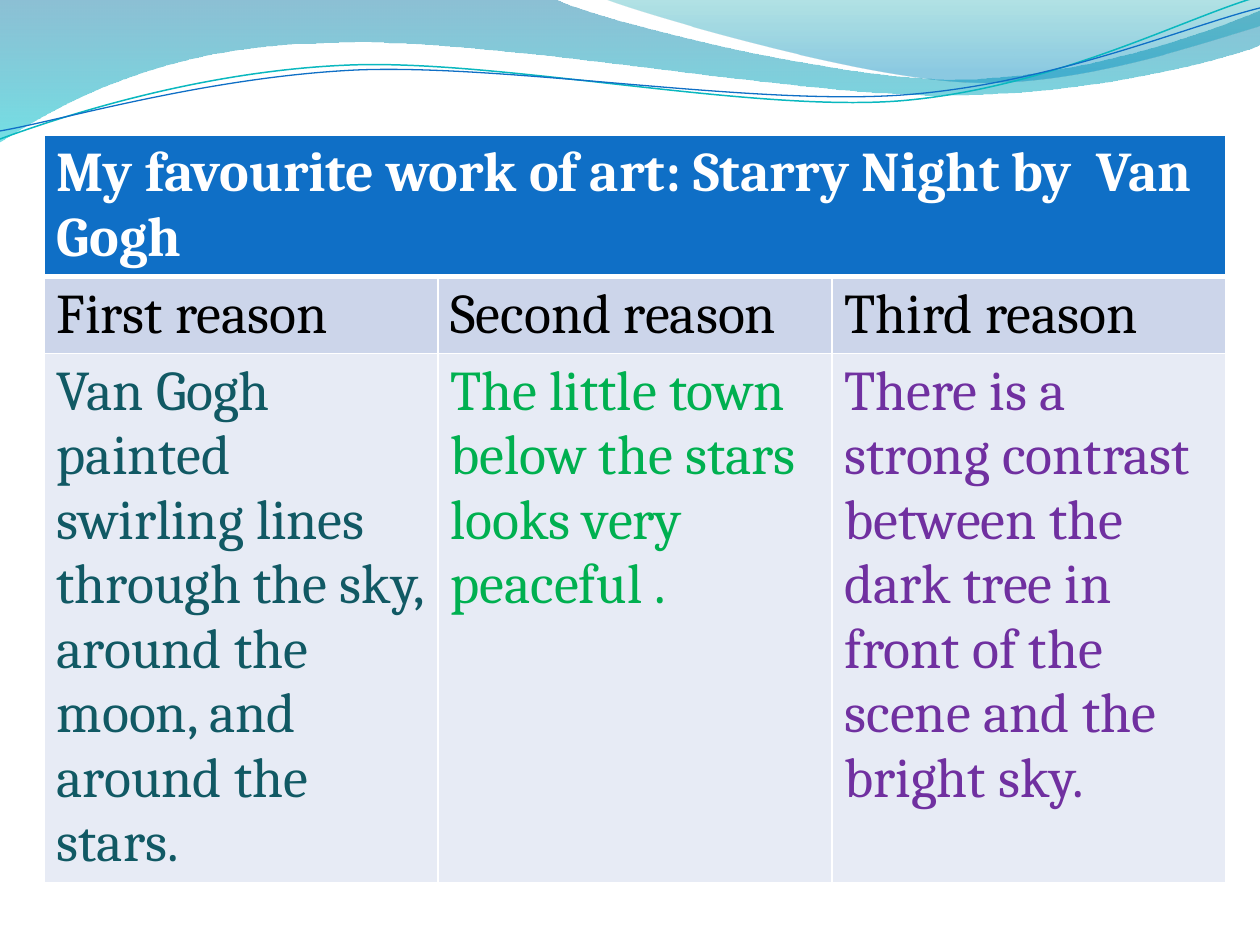
from dataclasses import dataclass

import lxml.etree
import pptx
import pptx.dml.color
import pptx.oxml
import pptx.oxml.ns
import pptx.util

RGBColor = pptx.dml.color.RGBColor
Point = tuple[int, int]
Segment = tuple[Point, ...]

PX = 914400 / 126
FONT_NAME = "Cambria"
FONT_SIZE = pptx.util.Pt(32)

WHITE = RGBColor(0xFF, 0xFF, 0xFF)
BLACK = RGBColor(0x00, 0x00, 0x00)
BLUE = RGBColor(0x0F, 0x6F, 0xC6)
AQUA = RGBColor(0x0A, 0xB8, 0xBF)
DEEP_BLUE = RGBColor(0x00, 0x74, 0xA1)
CYAN = RGBColor(0x00, 0xC6, 0xCF)
SEA_GREEN = RGBColor(0x00, 0xA1, 0xA9)
SKY_BLUE = RGBColor(0x00, 0x8B, 0xBF)
BAND_DARK = RGBColor(0xCC, 0xD5, 0xEA)
BAND_LIGHT = RGBColor(0xE7, 0xEB, 0xF5)
TEAL = RGBColor(0x11, 0x59, 0x64)
GREEN = RGBColor(0x00, 0xB0, 0x50)
PURPLE = RGBColor(0x70, 0x30, 0xA0)


@dataclass
class GradientStop:
    position: float
    color: RGBColor
    opacity: int


@dataclass
class Wave:
    start: Point
    segments: list[Segment]
    stops: tuple[GradientStop, GradientStop]


@dataclass
class Strand:
    start: Point
    segments: list[Segment]
    color: RGBColor
    width: float


@dataclass
class Reason:
    heading: str
    paragraphs: list[str]
    color: RGBColor


WAVES = [
    Wave(
        (0, 0),
        [
            ((554, -1),),
            ((600, 21), (837, 79), (955, 79)),
            ((1075, 79), (1207, 33), (1260, 11)),
            ((1261, 45),),
            ((1239, 55), (1096, 96), (940, 95)),
            ((784, 95), (481, 35), (324, 43)),
            ((163, 45), (58, 105), (-1, 142)),
        ],
        (GradientStop(0, DEEP_BLUE, 45), GradientStop(1, CYAN, 55)),
    ),
    Wave(
        (604, -1),
        [
            ((641, 14), (859, 78), (969, 82)),
            ((1079, 87), (1211, 40), (1260, 26)),
            ((1260, 0),),
        ],
        (GradientStop(0, SEA_GREEN, 30), GradientStop(0.8, SKY_BLUE, 45)),
    ),
]

STRANDS = [
    Strand(
        (0, 139),
        [
            ((60, 117), (199, 71), (349, 65)),
            ((498, 59), (747, 112), (898, 101)),
            ((1050, 89), (1182, 19), (1257, -3)),
        ],
        AQUA,
        0.85,
    ),
    Strand(
        (0, 131),
        [
            ((59, 121), (207, 77), (357, 70)),
            ((508, 64), (752, 106), (903, 95)),
            ((1053, 84), (1187, 26), (1260, 8)),
        ],
        BLUE,
        0.75,
    ),
]

TITLE = "My favourite work of art: Starry Night by  Van Gogh"
REASONS = [
    Reason(
        "First reason",
        ["Van Gogh painted",
         "swirling lines through the sky, around the moon, and around the stars."],
        TEAL,
    ),
    Reason("Second reason", ["The little town below the stars looks very peaceful ."], GREEN),
    Reason(
        "Third reason",
        ["There is a strong contrast between the dark tree in front of the scene "
         "and the bright sky."],
        PURPLE,
    ),
]
TABLE_LEFT, TABLE_TOP, TABLE_HEIGHT = 44, 135, 777
COLUMN_WIDTH, ROW_HEIGHT, ROW_COUNT = 394, 52, 3


def emu(pixels: int) -> int:
    return round(pixels * PX)


def add_outline(slide, start: Point, segments: list[Segment], close: bool):
    points = [point for segment in segments for point in segment]
    builder = slide.shapes.build_freeform(emu(start[0]), emu(start[1]))
    builder.add_line_segments([(emu(x), emu(y)) for x, y in points], close=close)
    shape = builder.convert_to_shape()
    shape.shadow.inherit = False
    lines = iter(list(shape.element.iter(pptx.oxml.ns.qn("a:lnTo"))))
    for segment in segments:
        steps = [next(lines) for _ in segment]
        if len(steps) == 3:
            curve = lxml.etree.Element(pptx.oxml.ns.qn("a:cubicBezTo"))
            steps[0].addprevious(curve)
            for step in steps:
                curve.append(step[0])
                step.getparent().remove(step)
    return shape


def add_wave(slide, wave: Wave) -> None:
    shape = add_outline(slide, wave.start, wave.segments, True)
    shape.line.fill.background()
    shape.fill.gradient()
    shape.fill.gradient_angle = 270
    for stop, values in zip(shape.fill.gradient_stops, wave.stops):
        stop.position = values.position
        stop.color.rgb = values.color
    colors = shape.element.spPr.iterfind(".//" + pptx.oxml.ns.qn("a:srgbClr"))
    for color, values in zip(colors, wave.stops):
        alpha = lxml.etree.SubElement(color, pptx.oxml.ns.qn("a:alpha"))
        alpha.set("val", str(values.opacity * 1000))


def add_strand(slide, strand: Strand) -> None:
    shape = add_outline(slide, strand.start, strand.segments, False)
    shape.fill.background()
    shape.line.color.rgb = strand.color
    shape.line.width = pptx.util.Pt(strand.width)


def set_borders(cell, top: int, bottom: int) -> None:
    properties = cell._tc.get_or_add_tcPr()
    widths = {"lnL": 1, "lnR": 1, "lnT": top, "lnB": bottom}
    for index, (side, width) in enumerate(widths.items()):
        border = pptx.oxml.parse_xml(
            f'<a:{side} {pptx.oxml.ns.nsdecls("a")} w="{pptx.util.Pt(width)}">'
            f'<a:solidFill><a:srgbClr val="{WHITE}"/></a:solidFill></a:{side}>'
        )
        properties.insert(index, border)


def fill_cell(cell, texts: list[str], color: RGBColor, fill: RGBColor,
              bold: bool = False, top: int = 1, bottom: int = 1) -> None:
    cell.fill.solid()
    cell.fill.fore_color.rgb = fill
    set_borders(cell, top, bottom)
    cell.text = "\n".join(texts)
    for paragraph in cell.text_frame.paragraphs:
        paragraph.font.name = FONT_NAME
        paragraph.font.size = FONT_SIZE
        paragraph.font.bold = bold
        paragraph.font.color.rgb = color


def add_reasons_table(slide) -> None:
    columns = len(REASONS)
    frame = slide.shapes.add_table(
        ROW_COUNT, columns, emu(TABLE_LEFT), emu(TABLE_TOP),
        emu(COLUMN_WIDTH * columns), emu(TABLE_HEIGHT),
    )
    table = frame.table
    for row in table.rows:
        row.height = emu(ROW_HEIGHT)
    frame.height = emu(TABLE_HEIGHT)
    table.cell(0, 0).merge(table.cell(0, columns - 1))
    fill_cell(table.cell(0, 0), [TITLE], WHITE, BLUE, bold=True, bottom=3)
    for index, reason in enumerate(REASONS):
        fill_cell(table.cell(1, index), [reason.heading], BLACK, BAND_DARK, top=3)
        fill_cell(table.cell(2, index), reason.paragraphs, reason.color, BAND_LIGHT)


def main() -> None:
    presentation = pptx.Presentation()
    presentation.slide_width = emu(1260)
    presentation.slide_height = emu(945)
    slide = presentation.slides.add_slide(presentation.slide_layouts[6])
    for wave in WAVES:
        add_wave(slide, wave)
    for strand in STRANDS:
        add_strand(slide, strand)
    add_reasons_table(slide)
    presentation.save("out.pptx")


if __name__ == "__main__":
    main()
